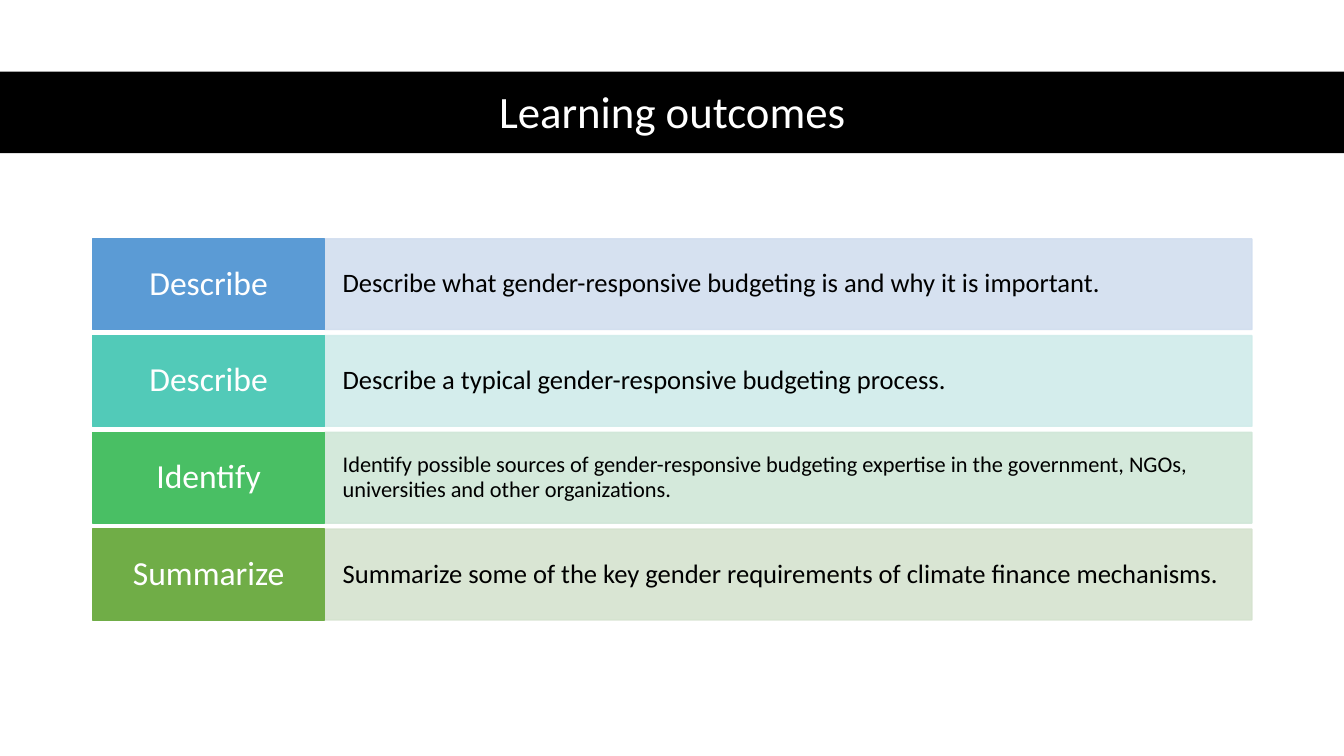
"""Build the slide that lists the learning outcomes."""
from dataclasses import dataclass

from lxml import etree
from pptx import Presentation
from pptx.dml.color import RGBColor
from pptx.enum.shapes import MSO_SHAPE
from pptx.enum.text import MSO_ANCHOR, MSO_AUTO_SIZE, PP_ALIGN
from pptx.oxml.ns import qn
from pptx.util import Pt

RECTANGLE = MSO_SHAPE.RECTANGLE
MIDDLE = MSO_ANCHOR.MIDDLE
NO_AUTOFIT = MSO_AUTO_SIZE.NONE
LEFT, CENTER = PP_ALIGN.LEFT, PP_ALIGN.CENTER
TITLE_ONLY = 5


@dataclass(frozen=True)
class Theme:
    font: str = "Calibri"
    dark: str = "000000"
    light: str = "FFFFFF"
    title_size: int = 32
    verb_size: int = 24
    outcome_size: int = 19
    long_outcome_size: int = 16
    outcome_opacity: int = 90


THEME = Theme()

SLIDE_WIDTH, SLIDE_HEIGHT = 960, 540
ROWS_LEFT, ROWS_TOP = 66.24, 170.64
ROW_HEIGHT, ROW_PITCH = 64.8, 69.12
VERB_WIDTH, OUTCOME_WIDTH = 165.6, 662.4
VERB_INSETS = (8.64, 6.48)
OUTCOME_INSETS = (12.96, 16.56)
TITLE_INSETS = (7.2, 3.6)

OUTCOMES = [
    ("Describe", "5B9BD5", "D2DEEF", THEME.outcome_size,
     "Describe what gender-responsive budgeting is and why it is important."),
    ("Describe", "52CAB8", "D0ECEA", THEME.outcome_size,
     "Describe a typical gender-responsive budgeting process."),
    ("Identify", "49BF64", "D0E7D8", THEME.long_outcome_size,
     "Identify possible sources of gender-responsive budgeting expertise in the "
     "government, NGOs, universities and other organizations."),
    ("Summarize", "70AD47", "D5E3CF", THEME.outcome_size,
     "Summarize some of the key gender requirements of climate finance mechanisms."),
]


def set_attributes(target, values):
    for name, value in values.items():
        setattr(target, name, value)


class SlideBuilder:
    def __init__(self, slide, theme):
        self.slide = slide
        self.theme = theme

    def put_text(self, shape, text, size, color, alignment, insets):
        horizontal, vertical = map(Pt, insets)
        frame = shape.text_frame
        frame.text = text
        paragraph = frame.paragraphs[0]
        set_attributes(frame, {
            "word_wrap": True, "auto_size": NO_AUTOFIT, "vertical_anchor": MIDDLE,
            "margin_left": horizontal, "margin_right": horizontal,
            "margin_top": vertical, "margin_bottom": vertical,
        })
        set_attributes(paragraph, {"alignment": alignment, "line_spacing": 0.9})
        font = paragraph.runs[0].font
        set_attributes(font, {"name": self.theme.font, "size": Pt(size)})
        font.color.rgb = RGBColor.from_string(color)

    def box(self, left, top, width, height, color, opacity=100):
        shape = self.slide.shapes.add_shape(
            RECTANGLE, *map(Pt, (left, top, width, height)))
        shape.shadow.inherit = False
        for fill in (shape.fill, shape.line.fill):
            fill.solid()
            fill.fore_color.rgb = RGBColor.from_string(color)
        shape.line.width = Pt(1)
        if opacity < 100:
            for node in shape.element.spPr.iter(qn("a:srgbClr")):
                etree.SubElement(node, qn("a:alpha"), val=str(opacity * 1000))
        return shape

    def title(self, text):
        title = self.slide.shapes.title
        set_attributes(title, {"left": Pt(66.24), "top": Pt(53.28),
                               "width": Pt(828), "height": Pt(56.16)})
        self.put_text(title, text, self.theme.title_size, self.theme.light,
                      CENTER, TITLE_INSETS)
        band = self.box(0, 51.12, SLIDE_WIDTH, 58.32, self.theme.dark)
        band.line.fill.background()
        title.element.addprevious(band.element)

    def outcome_row(self, top, verb, verb_color, outcome_color, size, outcome):
        outcome_box = self.box(ROWS_LEFT + VERB_WIDTH, top, OUTCOME_WIDTH,
                               ROW_HEIGHT, outcome_color, self.theme.outcome_opacity)
        self.put_text(outcome_box, outcome, size, self.theme.dark, LEFT,
                      OUTCOME_INSETS)
        verb_box = self.box(ROWS_LEFT, top, VERB_WIDTH, ROW_HEIGHT, verb_color)
        self.put_text(verb_box, verb, self.theme.verb_size, self.theme.light,
                      CENTER, VERB_INSETS)


def main():
    presentation = Presentation()
    set_attributes(presentation, {"slide_width": Pt(SLIDE_WIDTH),
                                  "slide_height": Pt(SLIDE_HEIGHT)})
    slide = presentation.slides.add_slide(presentation.slide_layouts[TITLE_ONLY])
    builder = SlideBuilder(slide, THEME)
    builder.title("Learning outcomes")
    for index, row in enumerate(OUTCOMES):
        builder.outcome_row(ROWS_TOP + index * ROW_PITCH, *row)
    presentation.save("out.pptx")


if __name__ == "__main__":
    main()
